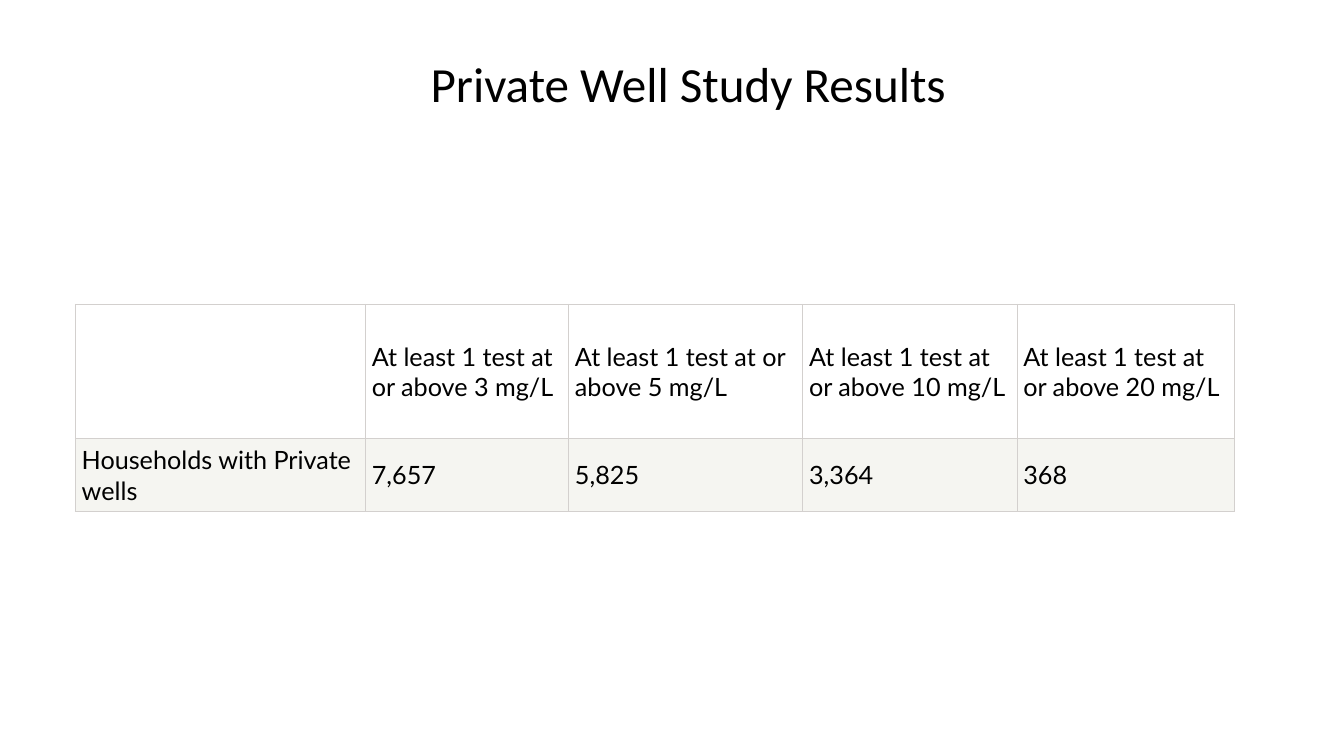
from lxml.etree import SubElement
from pptx import Presentation
from pptx.dml.color import RGBColor
from pptx.enum.text import MSO_ANCHOR, MSO_AUTO_SIZE, PP_ALIGN
from pptx.oxml.ns import qn
from pptx.util import Cm, Pt

TITLE = "Private Well Study Results"
LIMITS = (3, 5, 10, 20)  # mg/L
HOUSEHOLDS = ("7,657", "5,825", "3,364", "368")
ROWS = [
    ("", *(f"At least 1 test at or above {limit} mg/L" for limit in LIMITS)),
    ("Households with Private wells", *HOUSEHOLDS),
]
COLUMN_WIDTHS = (7.31, 5.12, 5.9, 5.4, 5.49)  # cm
ROW_HEIGHTS = (3.38, 1.84)  # cm
ROW_FILLS = ("FFFFFF", "F5F5F1")
BORDER = "D3D0CE"
CELL_MARGIN = Cm(0.16)


def color(hex_code):
    return RGBColor.from_string(hex_code)


def set_font(paragraph, name, size):
    paragraph.font.name = name
    paragraph.font.size = Pt(size)
    paragraph.font.color.rgb = color("000000")


def add_borders(cell):
    """Draw all four sides; the lines must precede the fill in tcPr."""
    properties = cell._tc.get_or_add_tcPr()
    for position, side in enumerate(("a:lnL", "a:lnR", "a:lnT", "a:lnB")):
        line = SubElement(properties, qn(side), w=str(Pt(0.75)))
        fill = SubElement(line, qn("a:solidFill"))
        SubElement(fill, qn("a:srgbClr"), val=BORDER)
        properties.insert(position, line)


def add_title(slide):
    title = slide.shapes.title
    title.left, title.top, title.width, title.height = Cm(2.74), Cm(1.45), Cm(29.21), Cm(1.57)
    frame = title.text_frame
    frame.text = TITLE
    frame.auto_size = MSO_AUTO_SIZE.NONE
    frame.vertical_anchor = MSO_ANCHOR.MIDDLE
    heading = frame.paragraphs[0]
    heading.alignment = PP_ALIGN.CENTER
    heading.line_spacing = 0.8
    set_font(heading, "Calibri", 35.1)


def add_results(slide):
    table = slide.shapes.add_table(
        len(ROWS), len(COLUMN_WIDTHS), Cm(1.9), Cm(7.67),
        Cm(sum(COLUMN_WIDTHS)), Cm(sum(ROW_HEIGHTS)),
    ).table
    for column, width in zip(table.columns, COLUMN_WIDTHS):
        column.width = Cm(width)
    for row, height, texts, fill in zip(table.rows, ROW_HEIGHTS, ROWS, ROW_FILLS):
        row.height = Cm(height)
        for cell, text in zip(row.cells, texts):
            cell.text = text
            cell.vertical_anchor = MSO_ANCHOR.MIDDLE
            cell.margin_left = cell.margin_right = CELL_MARGIN
            cell.margin_top = cell.margin_bottom = CELL_MARGIN
            cell.fill.solid()
            cell.fill.fore_color.rgb = color(fill)
            add_borders(cell)
            paragraph = cell.text_frame.paragraphs[0]
            set_font(paragraph, "Lato", 18)
            paragraph.font.bold = False


def main():
    presentation = Presentation()
    presentation.slide_width, presentation.slide_height = Cm(33.87), Cm(19.05)
    slide = presentation.slides.add_slide(presentation.slide_layouts[5])
    add_results(slide)
    add_title(slide)
    presentation.save("out.pptx")


if __name__ == "__main__":
    main()
